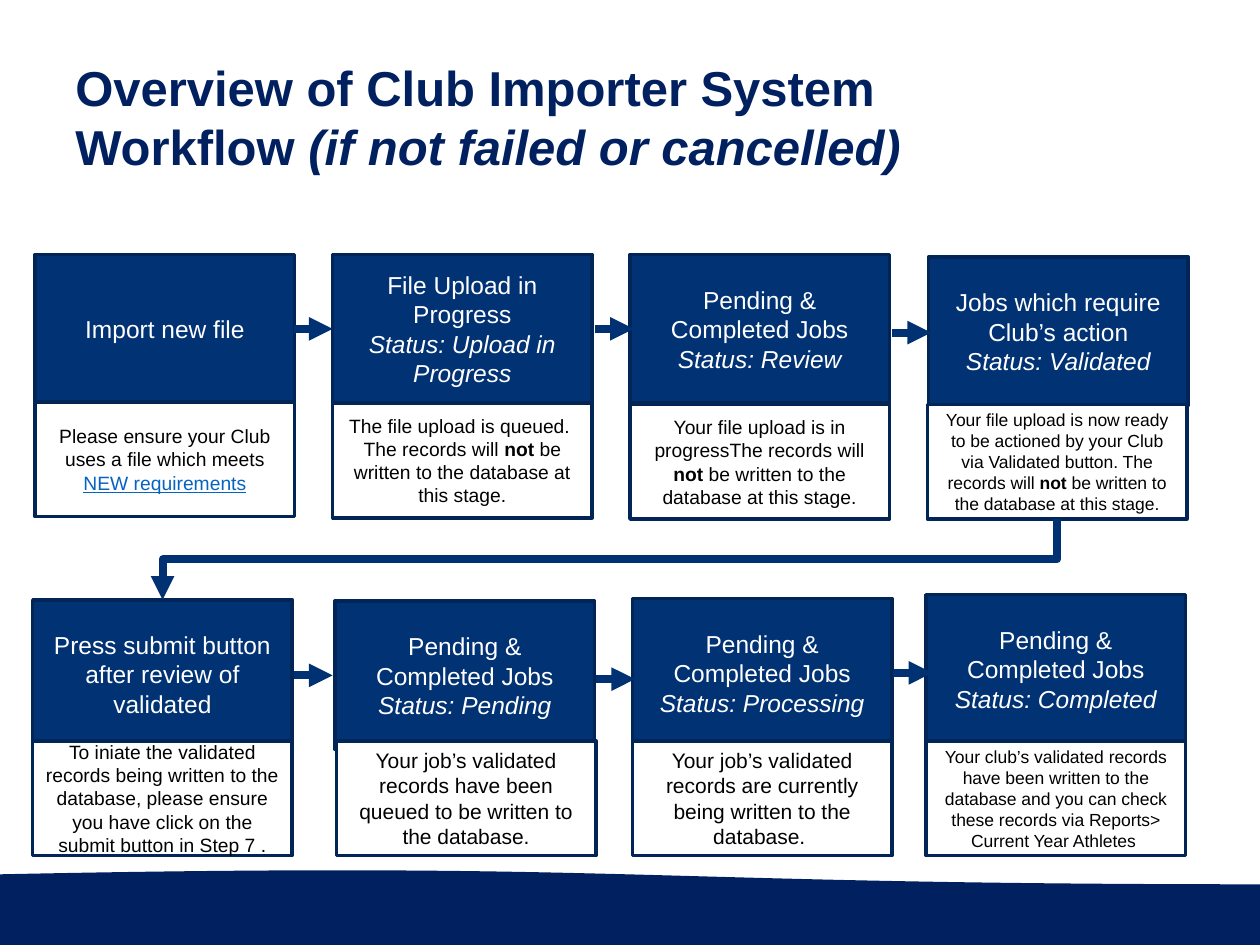
from lxml.etree import SubElement
from pptx import Presentation
from pptx.dml.color import RGBColor
from pptx.enum.shapes import MSO_CONNECTOR, MSO_SHAPE
from pptx.enum.text import MSO_ANCHOR, PP_ALIGN
from pptx.oxml.ns import qn
from pptx.util import Inches, Pt

NAVY, HEAD, EDGE, ARROW = "002060", "013274", "012556", "003172"
WHITE, BLACK, LINK = "FFFFFF", "000000", "0563C1"
BOX_WIDTH, HEAD_HEIGHT, BODY_HEIGHT = 2.06, 1.18, 0.91

TITLE = [("Overview of Club Importer System Workflow ", "b"),
         ("(if not failed or cancelled)", "bi")]
NOT_WRITTEN = [("not", "b"), (" be written to the database at this stage.", "")]
JOBS = "Pending & Completed Jobs"

# head (left, top), heading, status, body (left, top), body size, body runs
STEPS = [
    ((0.28, 2.02), "Import new file", "", (0.28, 3.19), 11,
     [("Please ensure your Club uses a file which meets ", ""), ("NEW requirements", "u")]),
    ((2.64, 2.02), "File Upload in Progress", "Status: Upload in Progress", (2.64, 3.2), 11,
     [("The file upload is queued.  The records will ", "")] + NOT_WRITTEN),
    ((5, 2.02), JOBS, "Status: Review", (5, 3.21), 11,
     [("Your file upload is in progressThe records will ", "")] + NOT_WRITTEN),
    ((7.37, 2.04), "Jobs which require Club’s action", "Status: Validated", (7.36, 3.21), 10,
     [("Your file upload is now ready to be actioned by your Club via Validated button. "
       "The records will ", "")] + NOT_WRITTEN),
    ((0.26, 4.76), "Press submit button after review of validated", "", (0.26, 5.88), 11,
     [("To iniate the validated records being written to the database, please ensure "
       "you have click on the submit button in Step 7 .", "")]),
    ((2.66, 4.77), JOBS, "Status: Pending", (2.67, 5.88), 12,
     [("Your job’s validated records have been queued to be written to the database.", "")]),
    ((5.02, 4.75), JOBS, "Status: Processing", (5.02, 5.88), 12,
     [("Your job’s validated records are currently being written to the database. ", "")]),
    ((7.35, 4.72), JOBS, "Status: Completed", (7.35, 5.88), 10,
     [("Your club’s validated records have been written to the database and you can check "
       "these records via Reports> Current Year Athletes ", "")]),
]
ARROWS = [(2.33, 2.61), (4.72, 2.61), (7.08, 2.64), (2.33, 5.36), (4.73, 5.39), (7.09, 5.34)]
ARROW_LENGTH = 0.31
RETURN_START, RETURN_END = (8.39, 4.12), (1.29, 4.76)


def color(value):
    return RGBColor.from_string(value)


def write(shape, paragraphs, size, ink, align):
    frame = shape.text_frame
    frame.word_wrap = True
    frame.vertical_anchor = MSO_ANCHOR.MIDDLE
    for index, runs in enumerate(paragraphs):
        para = frame.add_paragraph() if index else frame.paragraphs[0]
        para.alignment = align
        for text, style in runs:
            span = para.add_run()
            span.text = text
            span.font.name = "Arial"
            span.font.size = Pt(size)
            span.font.bold = "b" in style
            span.font.italic = "i" in style
            span.font.underline = "u" in style
            span.font.color.rgb = color(LINK if "u" in style else ink)


def add_box(page, shape_type, left, top, width, height, fill, edge=None):
    box = page.shapes.add_shape(shape_type, Inches(left), Inches(top),
                                Inches(width), Inches(height))
    box.shadow.inherit = False
    box.fill.solid()
    box.fill.fore_color.rgb = color(fill)
    if edge:
        box.line.color.rgb = color(edge)
        box.line.width = Pt(2)
    else:
        box.line.fill.background()
    return box


def add_arrow(page, kind, start, end):
    arrow = page.shapes.add_connector(kind, *(Inches(value) for value in start + end))
    arrow.line.color.rgb = color(ARROW)
    arrow.line.width = Pt(4.5)
    SubElement(arrow.line._get_or_add_ln(), qn("a:tailEnd"), type="triangle")
    SubElement(arrow._element.spPr, qn("a:effectLst"))
    return arrow


def add_return_arrow(page, start, end):
    center_x, center_y = (start[0] + end[0]) / 2, (start[1] + end[1]) / 2
    half_width, half_height = (end[1] - start[1]) / 2, (start[0] - end[0]) / 2
    arrow = add_arrow(page, MSO_CONNECTOR.ELBOW,
                      (center_x - half_width, center_y - half_height),
                      (center_x + half_width, center_y + half_height))
    arrow._element.spPr.xfrm.set("rot", str(90 * 60000))


def main():
    deck = Presentation()
    deck.slide_width, deck.slide_height = Inches(10), Inches(7.5)
    page = deck.slides.add_slide(deck.slide_layouts[6])

    wave = add_box(page, MSO_SHAPE.FLOWCHART_DOCUMENT, 0, 6.9, 10, 0.6, NAVY)
    wave._element.spPr.xfrm.set("flipV", "1")
    title = page.shapes.add_textbox(Inches(0.5), Inches(0.3), Inches(8.28), Inches(1.25))
    write(title, [TITLE], 28, NAVY, PP_ALIGN.LEFT)

    for place, heading, status, *_ in STEPS:
        head = add_box(page, MSO_SHAPE.RECTANGLE, *place, BOX_WIDTH, HEAD_HEIGHT, HEAD, EDGE)
        lines = [[(heading, "")]] + ([[(status, "i")]] if status else [])
        write(head, lines, 14, WHITE, PP_ALIGN.CENTER)
    for left, top in ARROWS:
        add_arrow(page, MSO_CONNECTOR.STRAIGHT, (left, top), (left + ARROW_LENGTH, top))
    for *_, place, size, runs in STEPS:
        body = add_box(page, MSO_SHAPE.RECTANGLE, *place, BOX_WIDTH, BODY_HEIGHT, WHITE, EDGE)
        write(body, [runs], size, BLACK, PP_ALIGN.CENTER)
    add_return_arrow(page, RETURN_START, RETURN_END)

    deck.save("out.pptx")


if __name__ == "__main__":
    main()
